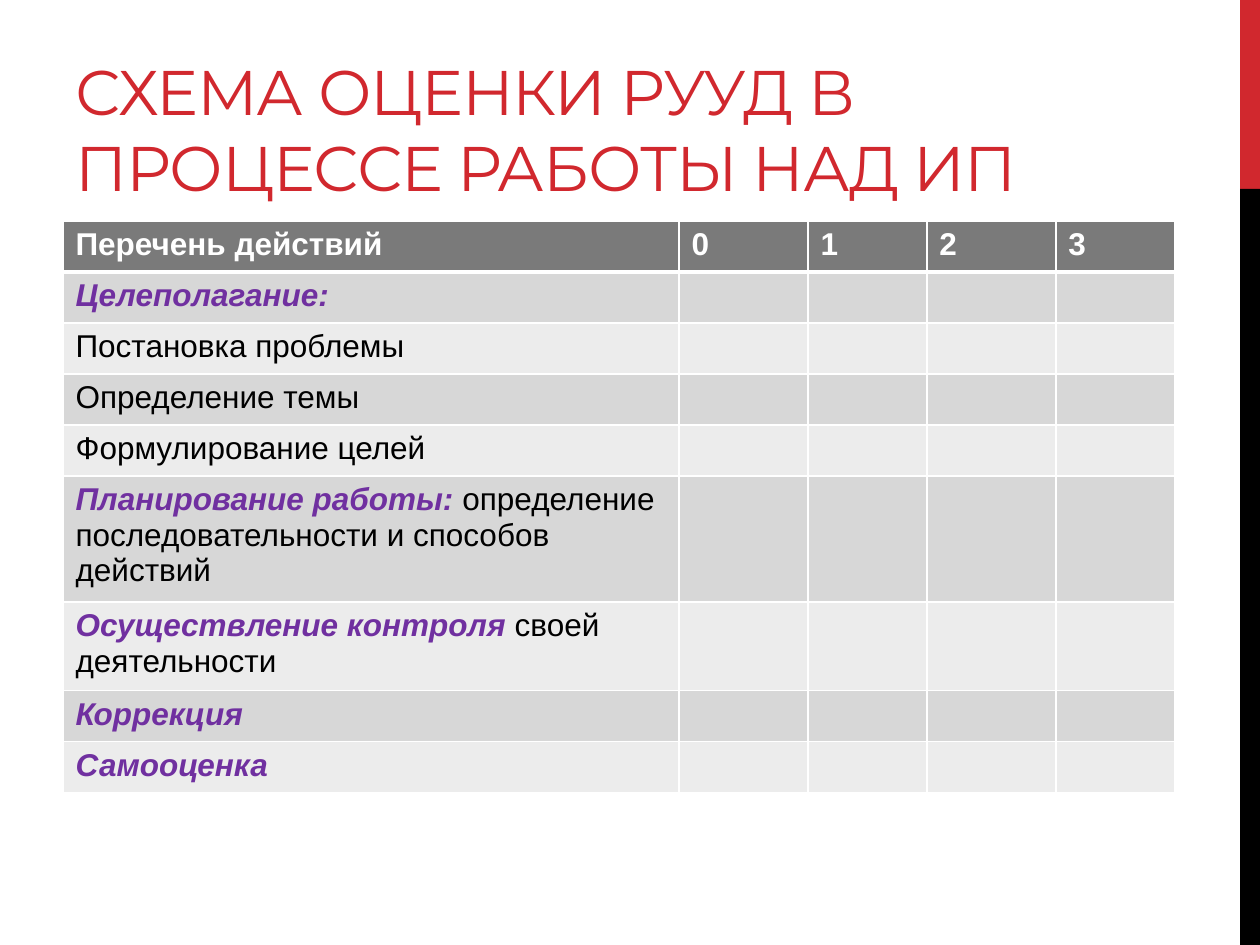
"""Build the slide with the assessment table for project work."""
from dataclasses import dataclass

from lxml import etree
from pptx import Presentation
from pptx import util as u
from pptx.dml.color import RGBColor
from pptx.enum import shapes, text
from pptx.oxml.ns import qn

EMU_PER_PX = 914400 / 126


def px(n):
    return u.Emu(round(n * EMU_PER_PX))


@dataclass(frozen=True)
class Theme:
    red: str = "D1282E"
    black: str = "000000"
    white: str = "FFFFFF"
    purple: str = "7030A0"
    header: str = "7A7A7A"
    bands: tuple = ("D7D7D7", "ECECEC")
    title_font: str = "Montserrat"
    body_font: str = "Arial"
    title_size: int = 36
    body_size: int = 18


class Deck:
    def __init__(self, prs, theme):
        self.theme = theme
        self.s = prs.slides.add_slide(prs.slide_layouts[6])

    def bar(self, x, y, w, h, color):
        sp = self.s.shapes.add_shape(shapes.MSO_SHAPE.RECTANGLE, px(x), px(y), px(w), px(h))
        sp.shadow.inherit = False
        sp.fill.solid()
        sp.fill.fore_color.rgb = RGBColor.from_string(color)
        sp.line.fill.background()

    def title(self, x, y, w, h, words):
        tf = self.s.shapes.add_textbox(px(x), px(y), px(w), px(h)).text_frame
        tf.word_wrap = True
        tf.vertical_anchor = text.MSO_ANCHOR.BOTTOM
        p = tf.paragraphs[0]
        p.font.name = self.theme.title_font
        p.font.size = u.Pt(self.theme.title_size)
        p.font.color.rgb = RGBColor.from_string(self.theme.red)
        r = p.add_run()
        r.text = words
        r.font._element.set("spc", "-60")

    def borders(self, cell, bottom):
        tc_pr = cell._tc.get_or_add_tcPr()
        for side, width in (("L", 1), ("R", 1), ("T", 1), ("B", bottom)):
            ln = etree.SubElement(tc_pr, qn(f"a:ln{side}"), w=str(u.Pt(width)))
            fill = etree.SubElement(ln, qn("a:solidFill"))
            etree.SubElement(fill, qn("a:srgbClr"), val=self.theme.white)

    def cell(self, cell, fill, runs, bottom=1):
        self.borders(cell, bottom)
        cell.fill.solid()
        cell.fill.fore_color.rgb = RGBColor.from_string(fill)
        p = cell.text_frame.paragraphs[0]
        p.font.name = self.theme.body_font
        p.font.size = u.Pt(self.theme.body_size)
        for words, color, bold, italic in runs:
            r = p.add_run()
            r.text = words
            r.font.bold, r.font.italic = bold, italic
            r.font.color.rgb = RGBColor.from_string(color)

    def table(self, x, y, col_widths, row_height, header, actions):
        t = self.theme
        n_rows = len(actions) + 1
        table = self.s.shapes.add_table(n_rows, len(header), px(x), px(y), px(sum(col_widths)),
                                        px(row_height * n_rows)).table
        for column, width in zip(table.columns, col_widths):
            column.width = px(width)
        for row in table.rows:
            row.height = px(row_height)
        for i, label in enumerate(header):
            self.cell(table.cell(0, i), t.header, [(label, t.white, True, False)], bottom=3)
        for i, (lead, rest) in enumerate(actions):
            runs = [(lead, t.purple, True, True), (rest, t.black, False, False)]
            for j in range(len(header)):
                shown = [run for run in runs if run[0]] if j == 0 else []
                self.cell(table.cell(i + 1, j), t.bands[i % 2], shown)


HEADER = ["Перечень действий", "0", "1", "2", "3"]
ACTIONS = [
    ("Целеполагание:", ""),
    ("", "Постановка проблемы"),
    ("", "Определение темы"),
    ("", "Формулирование целей"),
    ("Планирование работы: ", "определение последовательности и способов действий"),
    ("Осуществление контроля ", "своей деятельности"),
    ("Коррекция", ""),
    ("Самооценка", ""),
]


def main():
    prs = Presentation()
    prs.slide_width, prs.slide_height = px(1260), px(945)
    theme = Theme()
    deck = Deck(prs, theme)
    deck.bar(1240, 0, 20, 189, theme.red)
    deck.bar(1240, 189, 20, 756, theme.black)
    deck.title(63, 21, 1123, 189, "СХЕМА ОЦЕНКИ РУУД В ПРОЦЕССЕ РАБОТЫ НАД ИП")
    deck.table(63, 221, [616, 129, 119, 129, 119], 51, HEADER, ACTIONS)
    prs.save("out.pptx")


if __name__ == "__main__":
    main()
